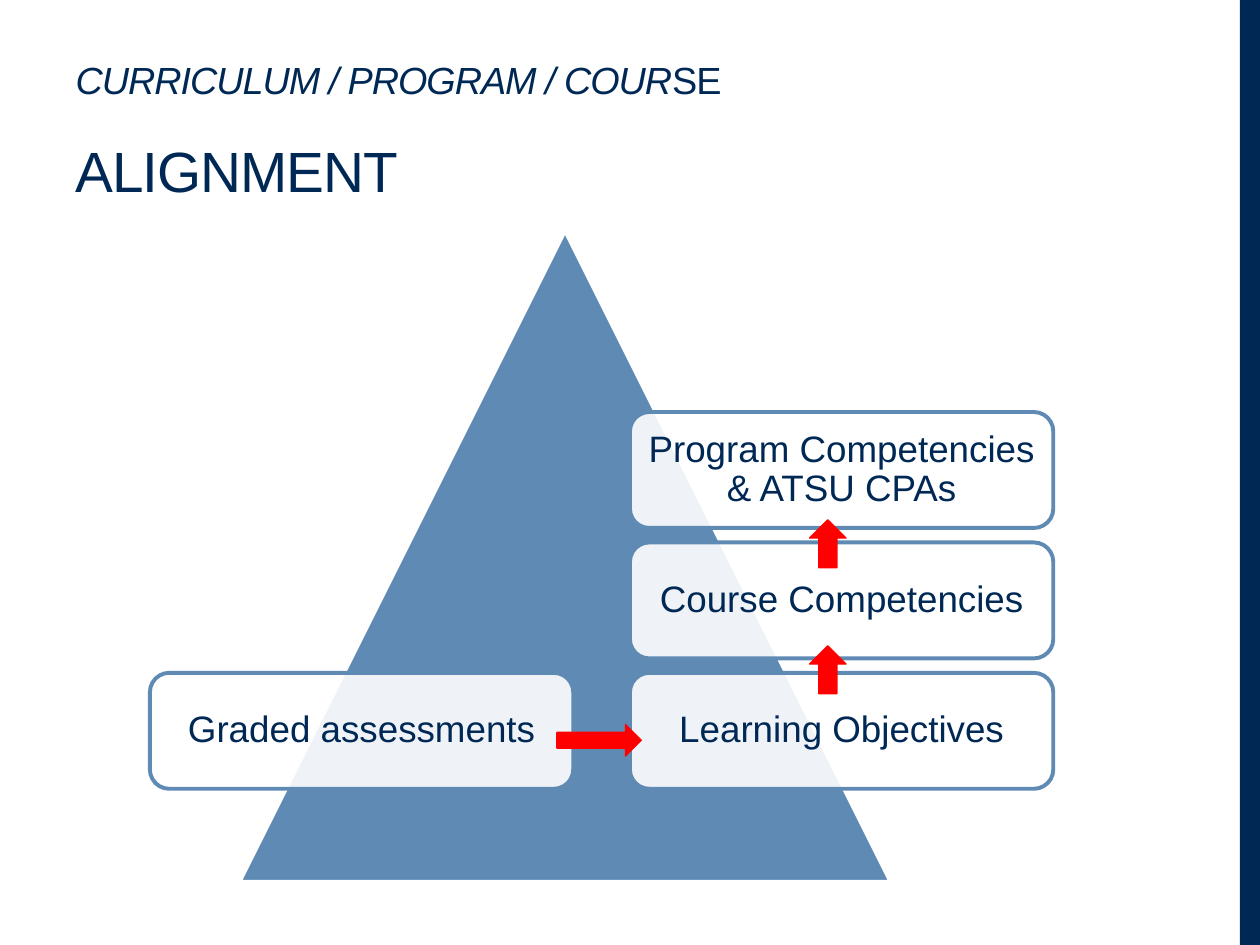
from copy import deepcopy

from lxml.etree import SubElement
from pptx import Presentation
from pptx.dml.color import RGBColor
from pptx.enum.shapes import MSO_SHAPE as Shape
from pptx.enum.text import MSO_ANCHOR as Anchor, MSO_AUTO_SIZE as AutoSize, PP_ALIGN as Align
from pptx.oxml.ns import qn
from pptx.util import Inches, Pt

NAVY = RGBColor(0x00, 0x28, 0x55)
BLUE = RGBColor(0x5E, 0x8A, 0xB4)
RED = RGBColor(0xFF, 0x00, 0x00)
WHITE = RGBColor(0xFF, 0xFF, 0xFF)

BOX_WIDTH, BOX_HEIGHT = 3.36, 0.92
STACK_LEFT, STACK_TOP, STACK_STEP = 5, 3.27, 1.035
STACK_LABELS = ["Program Competencies & ATSU CPAs", "Course Competencies", "Learning Objectives"]
ASSESSMENT_LEFT = 1.19


def add_filled_shape(page, kind, left, top, width, height, fill, line=None, line_width=0.75):
    shape = page.shapes.add_shape(kind, Inches(left), Inches(top), Inches(width), Inches(height))
    shape.shadow.inherit = False
    shape.fill.solid()
    shape.fill.fore_color.rgb = fill
    if line is None:
        shape.line.fill.background()
    else:
        shape.line.color.rgb = line
        shape.line.width = Pt(line_width)
    return shape


def style_run(run, size, italic=False):
    run.font.name = "Arial"
    run.font.size = Pt(size)
    run.font.italic = italic
    run.font.color.rgb = NAVY


def fill_title(page):
    title = page.shapes.title
    title.left, title.top = Inches(0.5), Inches(0.17)
    title.width, title.height = Inches(6.33), Inches(1.5)
    frame = title.text_frame
    frame.auto_size = AutoSize.NONE
    frame.word_wrap = True
    frame.vertical_anchor = Anchor.BOTTOM
    para = frame.paragraphs[0]
    para.alignment = Align.LEFT
    para.line_spacing = 1.5
    for text, size, italic in [("CURRICULUM / PROGRAM / COUR", 21.6, True),
                               ("SE", 21.6, False), ("ALIGNMENT", 32.4, False)]:
        if text == "ALIGNMENT":
            # The break takes the size of the line that it ends
            small_format = para.runs[-1].font._element
            para.add_line_break()
            para._p.find(qn("a:br")).append(deepcopy(small_format))
        run = para.add_run()
        run.text = text
        style_run(run, size, italic)
        run.font._element.set("spc", "-60")


def add_label_box(page, left, top, label):
    box = add_filled_shape(page, Shape.ROUNDED_RECTANGLE, left, top, BOX_WIDTH, BOX_HEIGHT,
                           WHITE, BLUE, 2.25)
    # Let the pyramid show faintly through the box
    color = box.fill._xPr.find(qn("a:solidFill"))[0]
    SubElement(color, qn("a:alpha"), val="90000")
    frame = box.text_frame
    frame.word_wrap = True
    frame.vertical_anchor = Anchor.MIDDLE
    frame.margin_left = frame.margin_right = Inches(0.09)
    frame.margin_top = frame.margin_bottom = Inches(0.09)
    frame.text = label
    para = frame.paragraphs[0]
    para.alignment = Align.CENTER
    para.line_spacing = 0.9
    style_run(para.runs[0], 21)


def add_arrow(page, left, top, width, height, rotation=0):
    arrow = add_filled_shape(page, Shape.RIGHT_ARROW, left, top, width, height, RED, RED)
    arrow.rotation = rotation


def main():
    deck = Presentation()
    deck.slide_width, deck.slide_height = Inches(10), Inches(7.5)
    page = deck.slides.add_slide(deck.slide_layouts[5])

    # Side band and title
    add_filled_shape(page, Shape.RECTANGLE, 9.84, 0, 0.16, 7.5, NAVY)
    fill_title(page)

    # Pyramid with its label boxes
    add_filled_shape(page, Shape.ISOSCELES_TRIANGLE, 1.9, 1.83, 5.17, 5.17, BLUE, WHITE, 2.25)
    for row, label in enumerate(STACK_LABELS):
        add_label_box(page, STACK_LEFT, STACK_TOP + row * STACK_STEP, label)
    add_label_box(page, ASSESSMENT_LEFT, STACK_TOP + 2 * STACK_STEP, "Graded assessments")

    # Arrows from assessments up to the program level
    add_arrow(page, 4.42, 5.75, 0.67, 0.25)
    for top in (5.17, 4.17):
        add_arrow(page, 6.38, top, 0.38, 0.29, rotation=270)

    deck.save("out.pptx")


if __name__ == "__main__":
    main()
